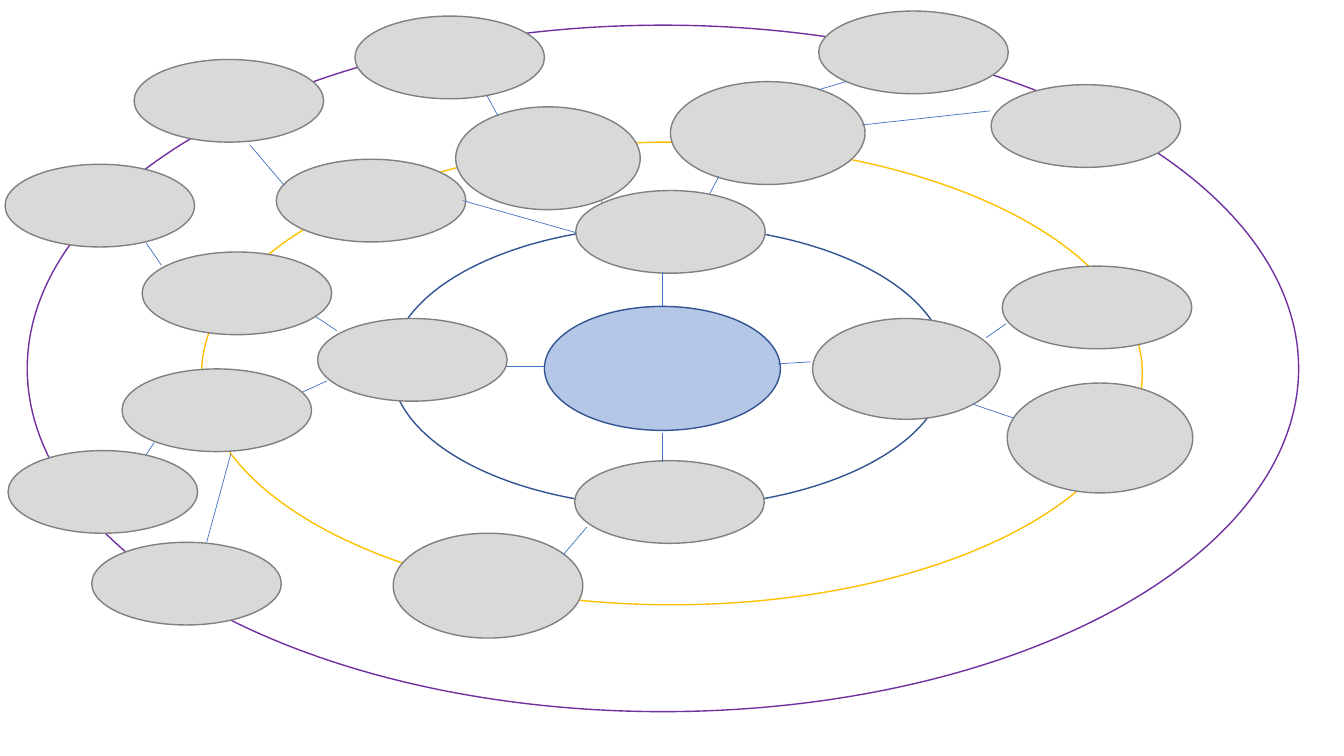
import pptx
import pptx.enum.shapes
import pptx.oxml.ns
import pptx.util
from pptx.dml.color import RGBColor
from pptx.util import Inches

COLORS = {
    "link": "4472C4",
    "centre_fill": "B4C7E7",
    "navy": "325491",
    "gold": "FFC000",
    "purple": "7030A0",
    "node_fill": "D9D9D9",
    "node_line": "808080",
}

SLIDE_BOX = (0, 0, 13.33, 7.5)
NODE_SIZE = (1.88, 0.82)

CENTRE = (5.4, 3.04, 2.34, 1.23)
RINGS = [
    ((2, 1.41, 9.33, 4.59), "gold"),
    ((3.88, 2.24, 5.51, 2.79), "navy"),
    ((0.27, 0.25, 12.61, 6.81), "purple"),
]

INNER_NODES = [(5.71, 1.89), (8.06, 3.16, 1.86, 1), (3.15, 3.16), (5.7, 4.57)]
MIDDLE_NODES = [
    (4.52, 1.06, 1.83, 1.02),
    (6.65, 0.81, 1.93, 1.02),
    (2.74, 1.58),
    (1.41, 2.5),
    (1.21, 3.66),
    (3.9, 5.29, 1.88, 1.04),
    (9.99, 3.8, 1.84, 1.09),
    (9.94, 2.64),
]
OUTER_NODES = [
    (3.52, 0.16),
    (1.33, 0.59),
    (0.05, 1.63),
    (0.08, 4.47),
    (0.91, 5.38),
    (8.12, 0.11),
    (9.83, 0.84),
]

BACK_LINKS = [(5.45, 3.63, 4.96, 3.63), (5.82, 1.84, 6.06, 2.1)]
CENTRE_LINKS = [
    (6.57, 3.04, 6.57, 2.7),
    (7.71, 3.61, 8.04, 3.59),
    (6.57, 4.3, 6.57, 4.58),
]
MIDDLE_LINKS = [
    (9.65, 4.01, 10.06, 4.15),
    (9.78, 3.35, 9.98, 3.21),
    (7.13, 1.75, 7.04, 1.92),
    (5.72, 2.31, 4.59, 1.99),
    (3.13, 3.14, 3.34, 3.28),
    (3, 3.89, 3.24, 3.78),
    (5.59, 5.5, 5.82, 5.23),
]
OUTER_LINKS = [
    (2.29, 4.5, 2.05, 5.38),
    (1.53, 4.39, 1.45, 4.51),
    (1.6, 2.63, 1.45, 2.41),
    (2.48, 1.44, 2.82, 1.84),
    (4.83, 0.95, 4.94, 1.15),
    (8.12, 0.89, 8.39, 0.81),
    (8.55, 1.24, 9.82, 1.1),
]


def color(name):
    return RGBColor.from_string(COLORS[name])


def add_ellipse(slide, box, line, fill=None):
    shape = slide.shapes.add_shape(
        pptx.enum.shapes.MSO_SHAPE.OVAL, *(Inches(length) for length in box)
    )
    shape.shadow.inherit = False
    if fill:
        shape.fill.solid()
        shape.fill.fore_color.rgb = color(fill)
    else:
        shape.fill.background()
    shape.line.color.rgb = color(line)
    shape.line.width = pptx.util.Pt(1)


def add_links(slide, box, links):
    left, top = box[:2]
    for x1, y1, x2, y2 in links:
        connector = slide.shapes.add_connector(
            pptx.enum.shapes.MSO_CONNECTOR.STRAIGHT,
            Inches(left + x1), Inches(top + y1),
            Inches(left + x2), Inches(top + y2),
        )
        connector.line.color.rgb = color("link")
        connector.line.width = pptx.util.Pt(0.5)
        properties = connector.element.spPr
        properties.append(pptx.oxml.xmlchemy.OxmlElement("a:effectLst"))


def add_rings(slide, box):
    left, top = box[:2]
    (gold, *front_rings) = RINGS
    centre = (CENTRE, "navy", "centre_fill")
    for (x, y, width, height), *style in [gold, centre, *front_rings]:
        add_ellipse(slide, (left + x, top + y, width, height), *style)


def add_nodes(slide, box, nodes):
    left, top = box[:2]
    for x, y, *size in nodes:
        node_box = (left + x, top + y, *(size or NODE_SIZE))
        add_ellipse(slide, node_box, "node_line", "node_fill")


def build_mind_map(slide, box):
    add_links(slide, box, BACK_LINKS)
    add_rings(slide, box)
    for nodes in (INNER_NODES, MIDDLE_NODES, OUTER_NODES):
        add_nodes(slide, box, nodes)
    for links in (CENTRE_LINKS, MIDDLE_LINKS, OUTER_LINKS):
        add_links(slide, box, links)


def main():
    presentation = pptx.Presentation()
    presentation.slide_width = Inches(SLIDE_BOX[2])
    presentation.slide_height = Inches(SLIDE_BOX[3])
    slide = presentation.slides.add_slide(presentation.slide_layouts[6])
    build_mind_map(slide, SLIDE_BOX)
    presentation.save("out.pptx")


if __name__ == "__main__":
    main()
